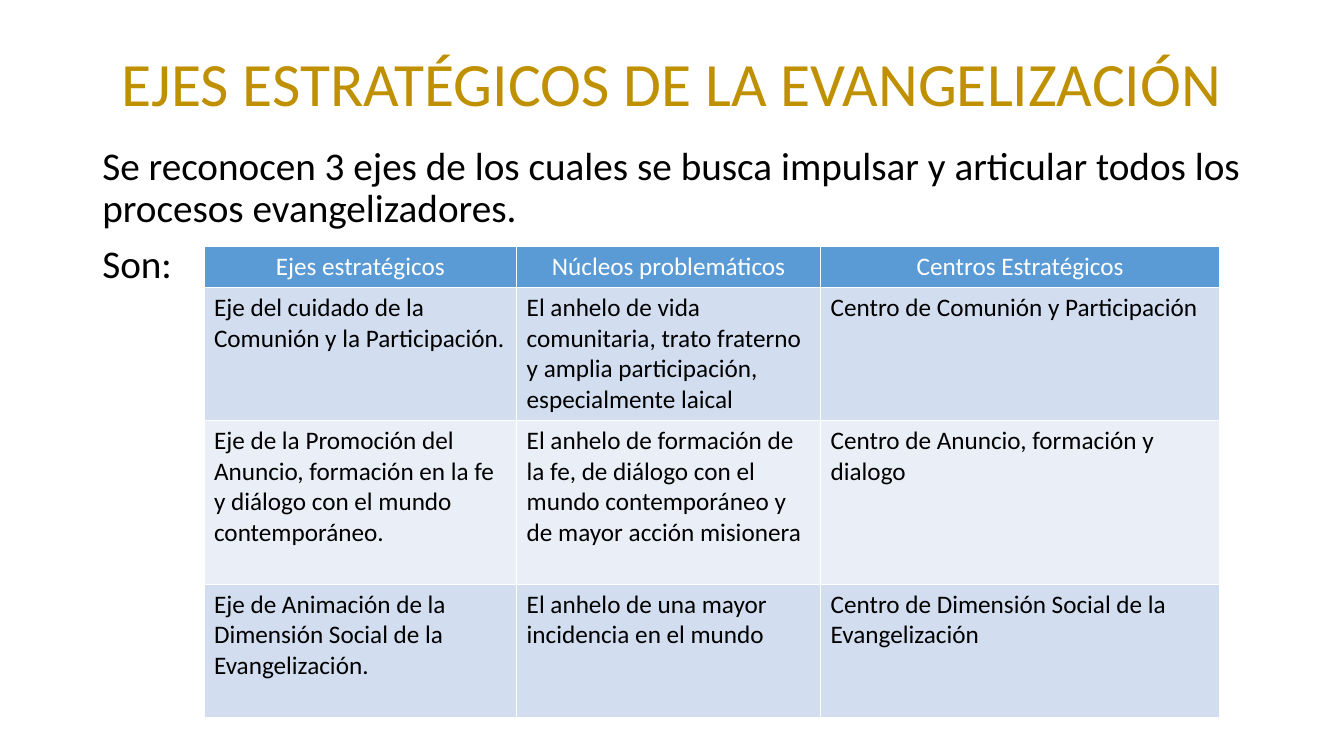
"""Build the slide on the strategic axes of evangelization."""
from pptx import Presentation
from pptx.dml.color import RGBColor
from pptx.enum.text import MSO_ANCHOR, MSO_AUTO_SIZE, PP_ALIGN
from pptx.util import Cm, Pt

LEFT, CENTER = PP_ALIGN.LEFT, PP_ALIGN.CENTER
MIDDLE, NO_FIT = MSO_ANCHOR.MIDDLE, MSO_AUTO_SIZE.NONE
GOLD = RGBColor(0xBF, 0x90, 0x00)
BLACK = RGBColor(0x00, 0x00, 0x00)
WHITE = RGBColor(0xFF, 0xFF, 0xFF)
HEADER_BLUE = RGBColor(0x5B, 0x9B, 0xD5)
BANDS = [RGBColor(0xEA, 0xEF, 0xF7), RGBColor(0xD2, 0xDE, 0xEF)]

COLUMN_WIDTHS = [7.88, 7.66, 10.06]
ROW_HEIGHTS = [1.03, 3.35, 4.13, 3.35]
ROWS = [
    ["Ejes estratégicos", "Núcleos problemáticos", "Centros Estratégicos"],
    ["Eje del cuidado de la Comunión y la Participación.",
     "El anhelo de vida comunitaria, trato fraterno y amplia participación, especialmente laical",
     "Centro de Comunión y Participación"],
    ["Eje de la Promoción del Anuncio, formación en la fe y diálogo con el mundo contemporáneo.",
     "El anhelo de formación de la fe, de diálogo con el mundo contemporáneo y de mayor acción misionera",
     "Centro de Anuncio, formación y dialogo"],
    ["Eje de Animación de la Dimensión Social de la Evangelización.",
     "El anhelo de una mayor incidencia en el mundo",
     "Centro de Dimensión Social de la Evangelización"],
]
INTRO = [
    "Se reconocen 3 ejes de los cuales se busca impulsar y articular todos los procesos evangelizadores.",
    "Son:",
]


def write(paragraph, text, size=18, color=BLACK, align=LEFT, line=1.0, before=0):
    paragraph.alignment = align
    paragraph.line_spacing = line
    paragraph.space_before = Pt(before)
    run = paragraph.add_run()
    run.text = text
    run.font.name = "Calibri"
    run.font.size = Pt(size)
    run.font.bold = False
    run.font.color.rgb = color


prs = Presentation()
prs.slide_width, prs.slide_height = Cm(33.87), Cm(19.05)
slide = prs.slides.add_slide(prs.slide_layouts[5])

title = slide.shapes.title
title.left, title.top, title.width, title.height = Cm(2.33), Cm(1.02), Cm(29.21), Cm(2.31)
title.text_frame.vertical_anchor = MIDDLE
title.text_frame.auto_size = NO_FIT
write(title.text_frame.paragraphs[0], "EJES ESTRATÉGICOS DE LA EVANGELIZACIÓN",
      size=44, color=GOLD, align=CENTER, line=0.9)

intro = slide.shapes.add_textbox(Cm(2.33), Cm(3.56), Cm(29.21), Cm(13.61)).text_frame
intro.word_wrap = True
for index, sentence in enumerate(INTRO):
    paragraph = intro.add_paragraph() if index else intro.paragraphs[0]
    write(paragraph, sentence, size=28, line=0.9, before=10)

axes = slide.shapes.add_table(len(ROWS), len(COLUMN_WIDTHS), Cm(5.14), Cm(6.21),
                              Cm(sum(COLUMN_WIDTHS)), Cm(sum(ROW_HEIGHTS))).table
for column, width in zip(axes.columns, COLUMN_WIDTHS):
    column.width = Cm(width)
for r, (entries, height) in enumerate(zip(ROWS, ROW_HEIGHTS)):
    axes.rows[r].height = Cm(height)
    for c, entry in enumerate(entries):
        cell = axes.cell(r, c)
        cell.fill.solid()
        cell.fill.fore_color.rgb = BANDS[r % 2] if r else HEADER_BLUE
        write(cell.text_frame.paragraphs[0], entry,
              color=BLACK if r else WHITE, align=LEFT if r else CENTER)

prs.save("out.pptx")
